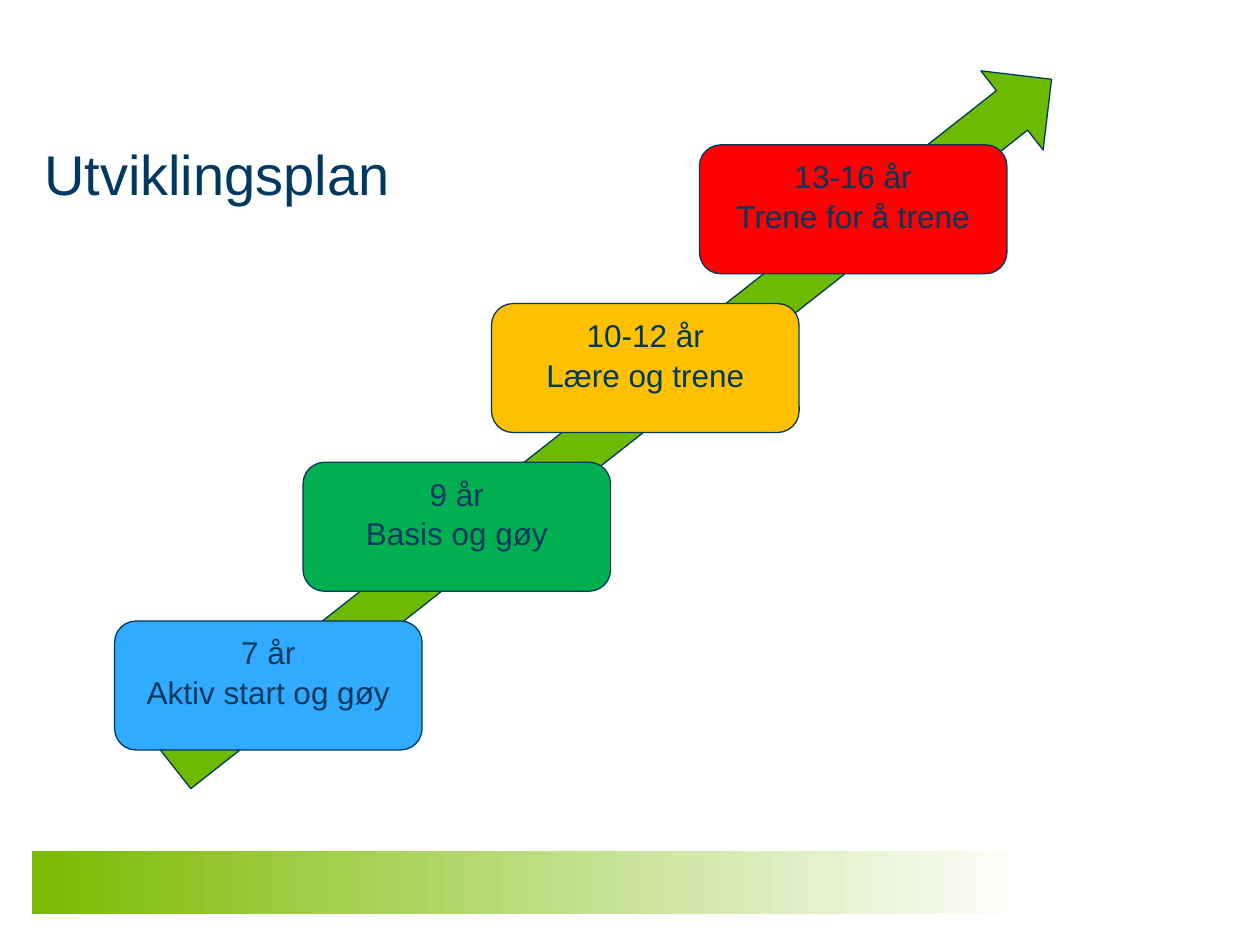
from pptx import Presentation
from pptx.dml.color import RGBColor
from pptx.enum.shapes import MSO_SHAPE as Preset
from pptx.enum.text import MSO_ANCHOR as Anchor, PP_ALIGN as Align
from pptx.util import Cm, Pt

NAVY = "003960"
STAGES = [
    ("7 år", "Aktiv start og gøy", "30ABFF", 0),
    ("9 år", "Basis og gøy", "00B050", 3.8),
    ("10-12 år", "Lære og trene", "FFC000", 7.6),
    ("13-16 år", "Trene for å trene", "FF0000", 11.79),
]


def rgb(value):
    return RGBColor.from_string(value)


def add_run(paragraph, words, size):
    run = paragraph.add_run()
    run.text = words
    run.font.name = "Arial"
    run.font.size = Pt(size)
    run.font.color.rgb = rgb(NAVY)


def add_outlined(slide, preset, box, color):
    outlined = slide.shapes.add_shape(preset, *map(Cm, box))
    outlined.shadow.inherit = False
    outlined.fill.solid()
    outlined.fill.fore_color.rgb = rgb(color)
    outlined.line.color.rgb = rgb(NAVY)
    outlined.line.width = Pt(0.75)
    return outlined


def add_footer_band(slide, box):
    band = slide.shapes.add_shape(Preset.RECTANGLE, *map(Cm, box))
    band.shadow.inherit = False
    band.line.fill.background()
    band.fill.gradient()
    band.fill.gradient_angle = 0
    for stop, color in zip(band.fill.gradient_stops, ("7ABA00", "FFFFFF")):
        stop.color.rgb = rgb(color)


def add_heading(slide, box):
    heading = slide.shapes.add_textbox(*map(Cm, box)).text_frame
    heading.word_wrap = True
    heading.vertical_anchor = Anchor.MIDDLE
    add_run(heading.paragraphs[0], "Utviklingsplan", 32)


def add_stage(slide, box, age, focus, color):
    stage = add_outlined(slide, Preset.ROUNDED_RECTANGLE, box, color)
    frame = stage.text_frame
    frame.word_wrap = True
    frame.vertical_anchor = Anchor.TOP
    age_line = frame.paragraphs[0]
    focus_line = frame.add_paragraph()
    focus_line.space_before = Pt(1)
    for line, words in ((age_line, age), (focus_line, focus)):
        line.alignment = Align.CENTER
        add_run(line, words, 18)


def add_staircase(slide, box):
    left, top, width, height = box
    stage_width, stage_height = 6.2, 2.6
    rise = (height - stage_height) / (len(STAGES) - 1)
    arrow_width, arrow_length = 2.03, 22.48
    arrow_box = (left + width / 2 + 1.06 - arrow_width / 2,
                 top + height / 2 + 0.47 - 0.5 - arrow_length / 2 - 0.04 + 1.2 - 1.2,
                 arrow_width, arrow_length)
    arrow_box = (left + 9.04, top - 5.61, arrow_width, arrow_length)
    arrow = add_outlined(slide, Preset.UP_ARROW, arrow_box, "6EBA00")
    arrow.rotation = 51.8
    for step, (age, focus, color, offset) in enumerate(STAGES):
        stage_top = top + height - stage_height - step * rise
        stage_box = (left + offset, stage_top, stage_width, stage_height)
        add_stage(slide, stage_box, age, focus, color)


def main():
    deck = Presentation()
    deck.slide_width, deck.slide_height = Cm(25.4), Cm(19.05)
    slide = deck.slides.add_slide(deck.slide_layouts[6])
    add_footer_band(slide, (0.64, 17.15, 20.12, 1.27))
    add_heading(slide, (0.64, 2.11, 22.86, 2.74))
    add_staircase(slide, (2.31, 2.92, 17.99, 12.2))
    deck.save("out.pptx")


if __name__ == "__main__":
    main()
